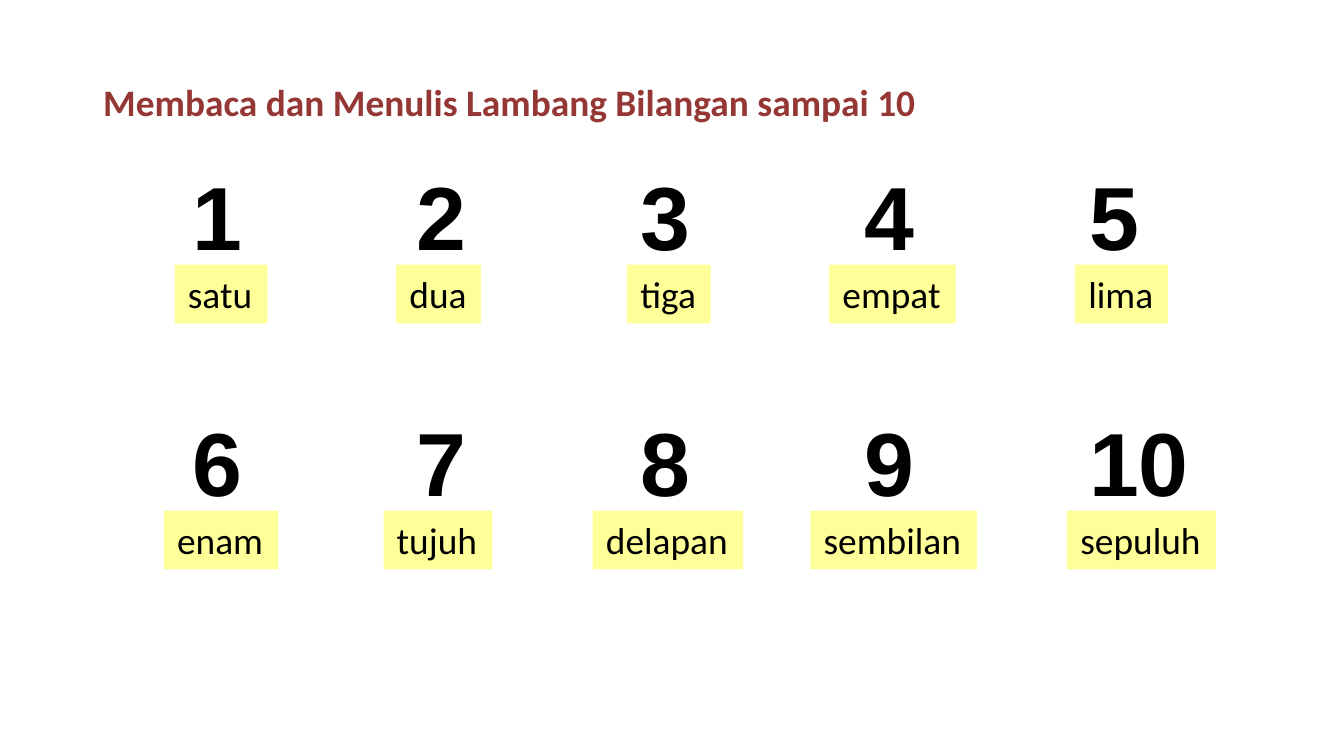
"""Build a slide that shows the numbers 1 to 10 with their Indonesian names."""
from lxml import etree
from pptx import Presentation
from pptx.dml.color import RGBColor
from pptx.enum.shapes import MSO_SHAPE
from pptx.enum.text import MSO_ANCHOR, MSO_AUTO_SIZE, PP_ALIGN
from pptx.oxml.ns import qn
from pptx.util import Pt

RECT = MSO_SHAPE.RECTANGLE
LEFT = PP_ALIGN.LEFT
TOP = MSO_ANCHOR.TOP
GROW = MSO_AUTO_SIZE.SHAPE_TO_FIT_TEXT

COLORS = {"title": "953735", "ink": "000000", "label": "FFFF99"}
STEP = 120.08
ROWS = [
    (82.8, range(1, 6), [
        ("satu", 118.4, 49.7), ("dua", 235, 45.4), ("tiga", 358.4, 44.8),
        ("empat", 478.1, 67.7), ("lima", 600.8, 49.7)]),
    (214.6, range(6, 11), [
        ("enam", 118.4, 61.2), ("tujuh", 234.6, 58.3), ("delapan", 357.8, 80.6),
        ("sembilan", 478.8, 89.3), ("sepuluh", 611.6, 79.9)]),
]


def color(key):
    return RGBColor.from_string(COLORS[key])


def set_text(shape, text, font, size, ink, bold=False, wrap=False, tabs=0):
    frame = shape.text_frame
    frame.word_wrap = wrap
    frame.auto_size = GROW
    frame.vertical_anchor = TOP
    para = frame.paragraphs[0]
    para.text = text
    para.alignment = LEFT
    if tabs:
        stops = etree.SubElement(para._p.get_or_add_pPr(), qn("a:tabLst"))
        for i in range(1, tabs + 1):
            etree.SubElement(stops, qn("a:tab"), pos=str(Pt(STEP * i)), algn="l")
    for run in para.runs:
        run.font.name = font
        run.font.size = Pt(size)
        run.font.bold = bold
        run.font.color.rgb = color(ink)


def add_title(slide, text):
    box = slide.shapes.add_textbox(Pt(48.2), Pt(38.9), Pt(453.6), Pt(31.5))
    set_text(box, text, "Calibri", 20, "title", bold=True)


def add_digits(group, top, nums):
    box = group.shapes.add_textbox(Pt(96), Pt(top), Pt(672), Pt(65.5))
    text = "\t".join(str(num) for num in nums)
    set_text(box, text, "Arial", 48, "ink", bold=True, wrap=True,
             tabs=len(nums) - 1)


def add_label(group, word, mid, top, width):
    rect = group.shapes.add_shape(
        RECT, Pt(mid - width / 2), Pt(top), Pt(width), Pt(31.5))
    rect.shadow.inherit = False
    rect.fill.solid()
    rect.fill.fore_color.rgb = color("label")
    rect.line.fill.background()
    set_text(rect, word, "Calibri", 20, "ink")


def add_row(slide, top, nums, labels):
    group = slide.shapes.add_group_shape()
    add_digits(group, top, nums)
    for word, mid, width in labels:
        add_label(group, word, mid, top + 59, width)


def main():
    deck = Presentation()
    deck.slide_width, deck.slide_height = Pt(720), Pt(405)
    slide = deck.slides.add_slide(deck.slide_layouts[6])
    add_title(slide, "Membaca dan Menulis Lambang Bilangan sampai 10")
    for top, nums, labels in ROWS:
        add_row(slide, top, nums, labels)
    deck.save("out.pptx")


if __name__ == "__main__":
    main()
